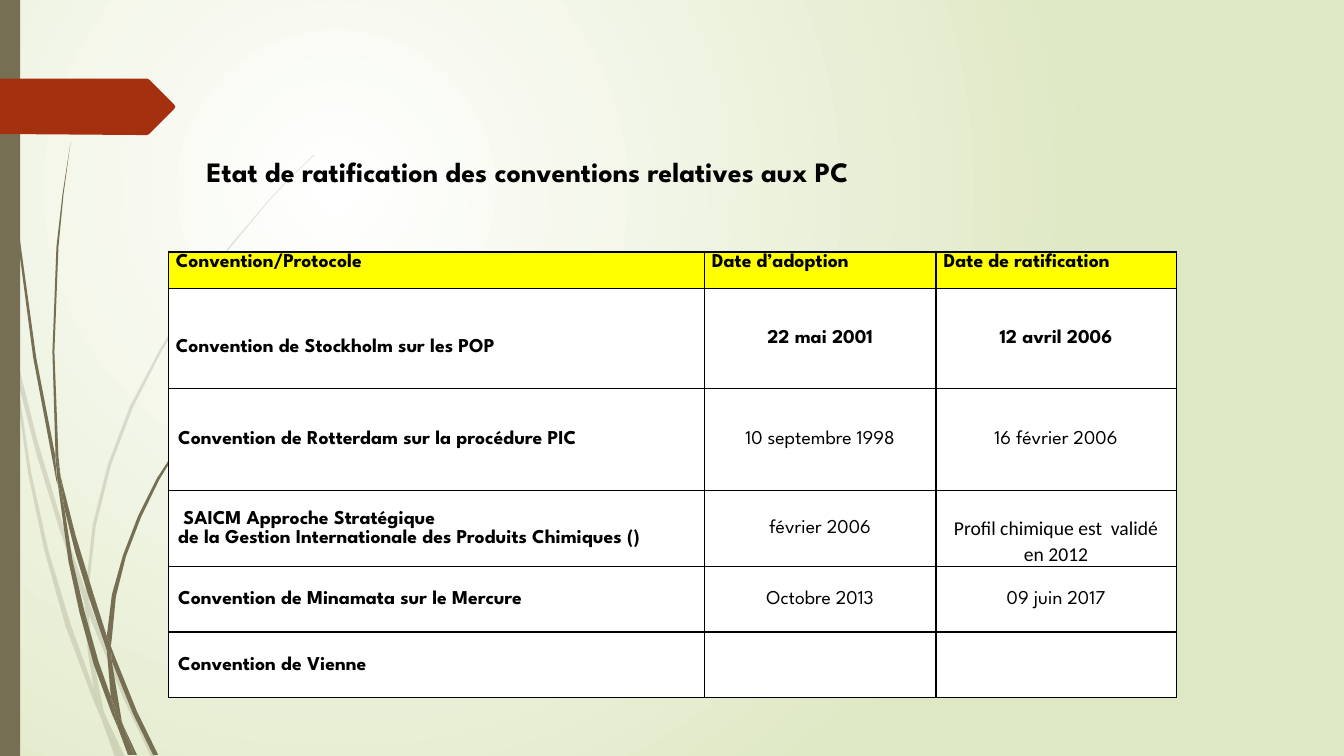
from lxml import etree
from pptx import Presentation
from pptx.dml.color import RGBColor
from pptx.enum.shapes import MSO_SHAPE
from pptx.enum.text import MSO_ANCHOR, MSO_AUTO_SIZE, PP_ALIGN
from pptx.oxml import parse_xml
from pptx.oxml.ns import nsdecls, qn
from pptx.util import Cm, Pt

RECTANGLE = MSO_SHAPE.RECTANGLE
TOP, MIDDLE, BOTTOM = MSO_ANCHOR.TOP, MSO_ANCHOR.MIDDLE, MSO_ANCHOR.BOTTOM
LEFT, CENTER, JUSTIFY = PP_ALIGN.LEFT, PP_ALIGN.CENTER, PP_ALIGN.JUSTIFY
NO_AUTOFIT = MSO_AUTO_SIZE.NONE
TITLE_FONT, NOTE_FONT = "League Spartan", "Calibri"
BLACK, WHITE, YELLOW, OLIVE, RED = "000000", "FFFFFF", "FFFF00", "766F54", "A53010"
OUTLINE_UNIT = Cm(2.54) / 100


def paint(fill, color):
    fill.solid()
    fill.fore_color.rgb = RGBColor.from_string(color)


def draw_outline(shapes, points, color):
    builder = shapes.build_freeform(*points[0], scale=OUTLINE_UNIT)
    builder.add_line_segments(points[1:], close=True)
    shape = builder.convert_to_shape()
    shape.shadow.inherit = False
    shape.line.fill.background()
    paint(shape.fill, color)
    return shape


deck = Presentation()
deck.slide_width, deck.slide_height = Cm(33.87), Cm(19.05)
page = deck.slides.add_slide(deck.slide_layouts[5])

background = page.background.fill
background.gradient()
for stop, color in zip(background.gradient_stops, (WHITE, "DFE8C4")):
    stop.color.rgb = RGBColor.from_string(color)
gradient = page.element.find(".//" + qn("a:gradFill"))
gradient.replace(gradient.find(qn("a:lin")), parse_xml(
    f'<a:path {nsdecls("a")} path="circle">'
    '<a:fillToRect l="50000" t="50000" r="100000" b="100000"/></a:path>'))

pale_blades = [
    [(11, 350), (9, 322), (0, 282), (0, 299), (10, 344)],
    [(58, 522), (84, 599), (85, 586), (62, 520), (37, 437), (14, 345), (17, 376), (36, 450)],
    [(92, 607), (88, 596), (88, 610), (123, 694), (150, 751), (155, 751), (127, 692)],
    [(119, 751), (124, 751), (105, 711)],
    [(93, 683), (70, 619), (48, 546), (31, 469), (17, 376), (11, 350), (28, 470),
     (44, 546), (65, 621), (92, 693), (101, 714), (99, 707)],
    [(84, 599), (87, 646), (93, 683), (96, 692), (105, 711), (103, 706), (91, 646),
     (88, 610), (88, 608)],
    [(88, 584), (95, 522), (110, 462), (132, 404), (160, 349), (192, 296), (229, 245),
     (268, 198), (290, 175), (312, 154), (312, 153), (289, 175), (268, 197), (228, 244),
     (190, 294), (158, 348), (129, 403), (107, 461), (92, 521), (85, 584), (85, 586), (88, 596)],
    [(101, 714), (114, 751), (119, 751)],
    [(88, 608), (88, 610), (88, 596), (85, 586), (84, 599)],
    [(96, 692), (93, 683), (99, 707), (101, 714), (119, 751), (105, 711)],
]
dark_blades = [
    [(7, 110), (17, 233), (33, 355), (56, 477), (57, 481), (55, 457), (55, 453), (36, 355),
     (19, 232), (8, 109), (5, 48), (4, 0), (3, 0), (4, 48)],
    [(88, 592), (106, 645), (106, 633), (106, 631), (93, 590), (75, 531), (60, 472),
     (64, 505), (75, 549)],
    [(113, 649), (110, 641), (111, 656), (132, 708), (152, 749), (157, 749), (136, 706)],
    [(110, 691), (98, 657), (84, 607), (72, 556), (64, 505), (57, 477), (68, 557),
     (79, 608), (93, 659), (111, 708), (117, 722), (116, 717)],
    [(60, 472), (58, 453), (54, 349), (58, 245), (63, 193), (70, 141), (62, 193),
     (56, 245), (52, 349), (55, 449)],
    [(133, 749), (136, 749), (122, 719)],
    [(57, 477), (64, 505), (60, 472), (55, 449), (55, 453)],
    [(111, 633), (115, 592), (125, 552), (140, 513), (158, 476), (180, 440), (205, 406),
     (231, 374), (245, 359), (261, 344), (260, 344), (245, 358), (231, 373), (204, 405),
     (179, 439), (156, 474), (137, 512), (122, 551), (111, 590), (106, 631), (110, 641)],
    [(117, 722), (127, 749), (131, 749)],
    [(106, 645), (110, 691), (116, 706), (122, 719), (121, 716), (111, 656), (109, 651)],
    [(106, 645), (109, 651), (111, 656), (110, 641), (106, 631), (106, 633)],
    [(116, 706), (110, 691), (116, 717), (117, 722), (130, 749), (133, 749), (122, 719)],
]
for blades, opacity in ((pale_blades, "20000"), (dark_blades, "100000")):
    group = page.shapes.add_group_shape()
    for points in blades:
        blade = draw_outline(group.shapes, points, OLIVE)
        tone = blade.fill._xPr.find(".//" + qn("a:srgbClr"))
        etree.SubElement(tone, qn("a:alpha"), val=opacity)

side_bar = page.shapes.add_shape(RECTANGLE, 0, 0, Cm(0.51), Cm(19.05))
side_bar.shadow.inherit = False
side_bar.line.fill.background()
paint(side_bar.fill, OLIVE)

draw_outline(page.shapes, [(0, 78), (146, 78), (148, 79), (173, 104), (174, 106),
                           (173, 108), (148, 133), (146, 134), (136, 134), (0, 133)], RED)

title = page.shapes.title
title.left, title.top, title.width, title.height = Cm(5.21), Cm(2.95), Cm(23.57), Cm(1.78)
frame = title.text_frame
frame.text = "Etat de ratification des conventions relatives aux PC"
frame.auto_size = NO_AUTOFIT
frame.vertical_anchor = BOTTOM
frame.margin_left = frame.margin_right = frame.margin_top = frame.margin_bottom = 0
heading = frame.paragraphs[0]
heading.alignment = LEFT
heading.font.name, heading.font.size, heading.font.bold = TITLE_FONT, Pt(20), True
heading.font.color.rgb = RGBColor.from_string(BLACK)
page.shapes._spTree.append(title._element)

rows = [
    ["Convention/Protocole", "Date d’adoption", "Date de ratification"],
    ["Convention de Stockholm sur les POP", "22 mai 2001", "12 avril 2006"],
    ["Convention de Rotterdam sur la procédure PIC", "10 septembre 1998", "16 février 2006"],
    [" SAICM Approche Stratégique\nde la Gestion Internationale des Produits Chimiques ()",
     "février 2006", "Profil chimique est  validé en 2012"],
    ["Convention de Minamata sur le Mercure", "Octobre 2013", "09 juin 2017"],
    ["Convention de Vienne", "", ""],
]
widths = [13.51, 5.84, 6.05]
heights = [0.91, 2.52, 2.57, 1.65, 1.65, 1.65]
frame = page.shapes.add_table(len(rows), len(widths), Cm(4.24), Cm(6.35),
                              Cm(sum(widths)), Cm(sum(heights)))
table = frame.table
for column, width in zip(table.columns, widths):
    column.width = Cm(width)
for row, height in zip(table.rows, heights):
    row.height = Cm(height)

for row_index, texts in enumerate(rows):
    for column_index, text in enumerate(texts):
        cell = table.cell(row_index, column_index)
        header = row_index == 0
        note = (row_index, column_index) == (3, 2)
        cell.text = text
        paint(cell.fill, YELLOW if header else WHITE)
        cell.vertical_anchor = TOP if header or note else MIDDLE
        indented = column_index == 0 and row_index > 1
        cell.margin_left = cell.margin_right = Cm(0.25 if indented else 0.19)
        cell.margin_top = cell.margin_bottom = 0
        for para in cell.text_frame.paragraphs:
            para.alignment = JUSTIFY if header else CENTER if column_index else LEFT
            para.line_spacing = 1.07
            para.font.name = NOTE_FONT if note else TITLE_FONT
            para.font.size = Pt(14)
            para.font.bold = column_index == 0 or row_index < 2
            para.font.color.rgb = RGBColor.from_string(BLACK)
        properties = cell._tc.get_or_add_tcPr()
        for position, side in enumerate(("lnL", "lnR", "lnT", "lnB")):
            properties.insert(position, parse_xml(
                f'<a:{side} {nsdecls("a")} w="12700"><a:solidFill>'
                f'<a:srgbClr val="{BLACK}"/></a:solidFill></a:{side}>'))
table.cell(1, 0).margin_top = Cm(0.46)
table.cell(3, 2).margin_top = Cm(0.64)

deck.save("out.pptx")
